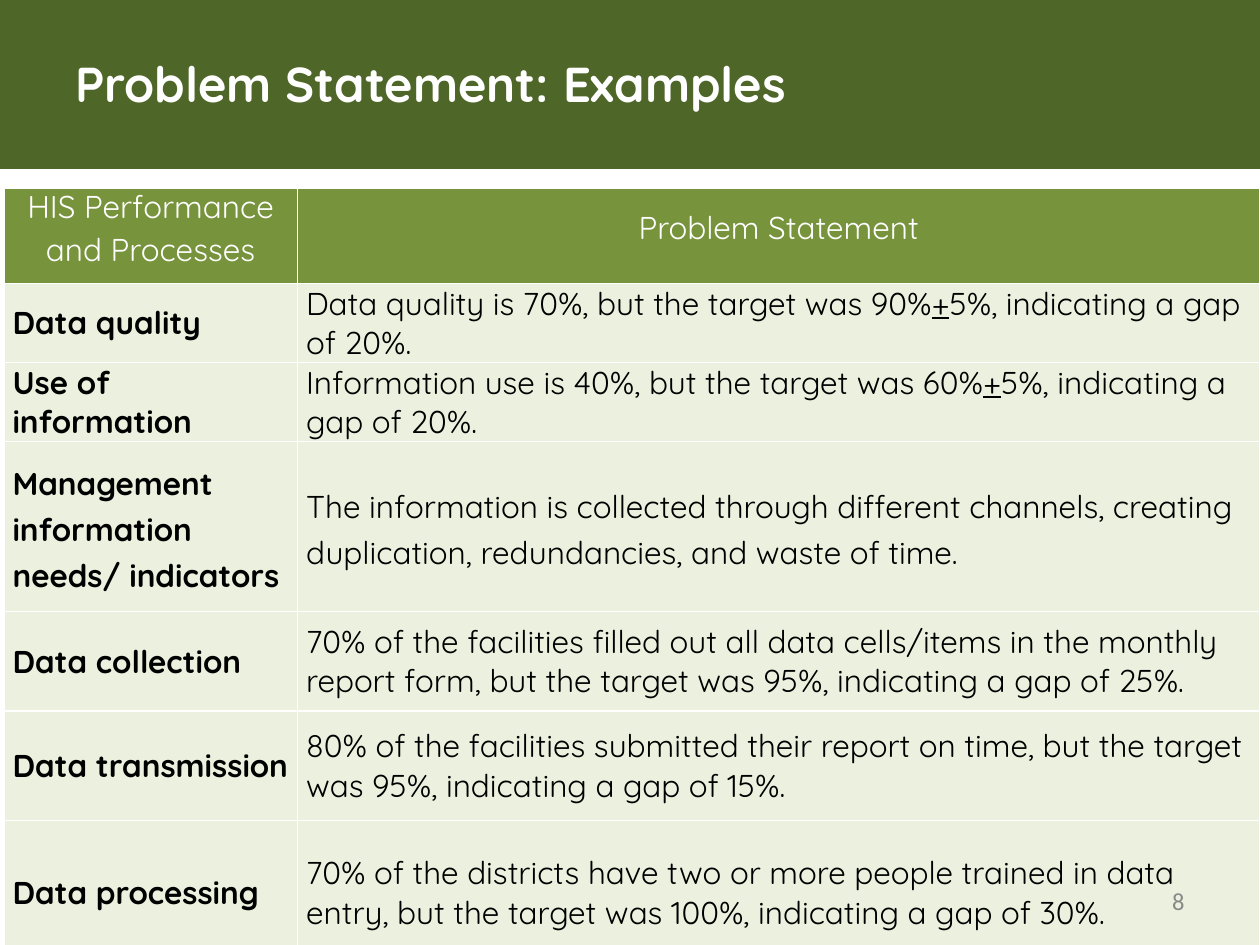
from dataclasses import dataclass

from lxml import etree
from pptx import Presentation
from pptx.dml.color import RGBColor as Color
from pptx.enum.shapes import MSO_SHAPE as Shape
from pptx.enum.text import MSO_ANCHOR as Anchor, PP_ALIGN as Align
from pptx.oxml.ns import qn
from pptx.util import Inches, Pt

HEADERS = [["HIS Performance", "and Processes"], ["Problem Statement"]]
EXAMPLES = [
    ("Data quality", "Data quality is 70%, but the target was 90%+5%, indicating a gap of 20%."),
    ("Use of information",
     "Information use is 40%, but the target was 60%+5%, indicating a gap of 20%."),
    ("Management information needs/ indicators",
     "The information is collected through different channels, creating duplication, "
     "redundancies, and waste of time."),
    ("Data collection",
     "70% of the facilities filled out all data cells/items in the monthly report form, "
     "but the target was 95%, indicating a gap of 25%."),
    ("Data transmission",
     "80% of the facilities submitted their report on time, but the target was 95%, "
     "indicating a gap of 15%."),
    ("Data processing",
     "70% of the districts have two or more people trained in data entry, "
     "but the target was 100%, indicating a gap of 30%."),
]
COLUMN_WIDTHS = [2.33, 7.64]
ROW_HEIGHTS = [0.76, 0.47, 0.57, 1.35, 0.79, 0.87, 1.14]
LINE_SPACING = {3: 1.16}
STATEMENT_SPACE = {3: 5, 6: 5}


@dataclass(frozen=True)
class Theme:
    font: str = "Quicksand"
    number_font: str = "Calibri"
    title_size: int = 28
    table_size: int = 18
    number_size: int = 14
    white: str = "FFFFFF"
    black: str = "000000"
    gray: str = "898989"
    band: str = "4F6629"
    header: str = "77933C"
    body: str = "EBF1DE"


class SlideBuilder:
    """Draws styled elements on one slide."""

    def __init__(self, slide, theme):
        self.slide = slide
        self.theme = theme

    def set_font(self, paragraph, size, color, bold=False, name=None):
        font = paragraph.font
        font.name = name or self.theme.font
        font.size = Pt(size)
        font.bold = bold
        font.color.rgb = Color.from_string(color)

    def band(self, *box):
        shape = self.slide.shapes.add_shape(Shape.RECTANGLE, *map(Inches, box))
        shape.shadow.inherit = False
        shape.fill.solid()
        shape.fill.fore_color.rgb = Color.from_string(self.theme.band)
        shape.line.fill.background()

    def text(self, content, box, size, color, align=Align.LEFT, **style):
        frame = self.slide.shapes.add_textbox(*map(Inches, box)).text_frame
        frame.word_wrap = True
        frame.vertical_anchor = Anchor.MIDDLE
        paragraph = frame.paragraphs[0]
        paragraph.text = content
        paragraph.alignment = align
        self.set_font(paragraph, size, color, **style)

    def table(self, box, widths, heights):
        frame = self.slide.shapes.add_table(len(heights), len(widths), *map(Inches, box))
        table = frame.table
        for column, width in zip(table.columns, widths):
            column.width = Inches(width)
        for row, height in zip(table.rows, heights):
            row.height = Inches(height)
        return table

    def style_cell(self, cell, fill, indent=0):
        cell.margin_left = Inches(indent)
        cell.margin_right = cell.margin_top = cell.margin_bottom = 0
        cell.vertical_anchor = Anchor.MIDDLE
        cell.fill.solid()
        cell.fill.fore_color.rgb = Color.from_string(fill)
        properties = cell._tc.get_or_add_tcPr()
        for index, edge in enumerate(("a:lnL", "a:lnR", "a:lnT", "a:lnB")):
            line = etree.Element(qn(edge), w=str(Pt(1)))
            solid = etree.SubElement(line, qn("a:solidFill"))
            etree.SubElement(solid, qn("a:srgbClr"), val=self.theme.white)
            properties.insert(index, line)

    def header_cell(self, cell, lines):
        self.style_cell(cell, self.theme.header)
        frame = cell.text_frame
        frame.text = "\n".join(lines)
        for paragraph in frame.paragraphs:
            paragraph.alignment = Align.CENTER
            paragraph.space_before = Pt(2.2)
            self.set_font(paragraph, self.theme.table_size, self.theme.white)
        frame.paragraphs[0].space_before = Pt(0)
        frame.paragraphs[0].line_spacing = Pt(13.8)

    def body_cell(self, cell, content, bold=False, space_before=0, line_spacing=1.0):
        self.style_cell(cell, self.theme.body, indent=0.07)
        paragraph = cell.text_frame.paragraphs[0]
        paragraph.space_before = Pt(space_before)
        paragraph.line_spacing = line_spacing
        self.set_font(paragraph, self.theme.table_size, self.theme.black, bold)
        for part in filter(None, content.partition("+")):
            run = paragraph.add_run()
            run.text = part
            if part == "+":
                run.font.underline = True


def main():
    presentation = Presentation()
    presentation.slide_width, presentation.slide_height = Inches(10), Inches(7.5)
    slide = presentation.slides.add_slide(presentation.slide_layouts[6])
    theme = Theme()
    builder = SlideBuilder(slide, theme)

    builder.band(-0.14, -0.11, 10.27, 1.45)
    table = builder.table((0.03, 1.49, 9.97, 6.11), COLUMN_WIDTHS, ROW_HEIGHTS)
    for column, lines in enumerate(HEADERS):
        builder.header_cell(table.cell(0, column), lines)
    for row, (topic, statement) in enumerate(EXAMPLES, start=1):
        spacing = LINE_SPACING.get(row, 1.0)
        builder.body_cell(table.cell(row, 0), topic, True, 0.1, spacing)
        builder.body_cell(table.cell(row, 1), statement, False,
                          STATEMENT_SPACE.get(row, 0), spacing)
    builder.text("Problem Statement: Examples", (0.5, 0.42, 8.83, 0.47),
                 theme.title_size, theme.white, bold=True)
    builder.text("8", (7.17, 6.95, 2.33, 0.4), theme.number_size, theme.gray,
                 Align.RIGHT, name=theme.number_font)

    presentation.save("out.pptx")


if __name__ == "__main__":
    main()
